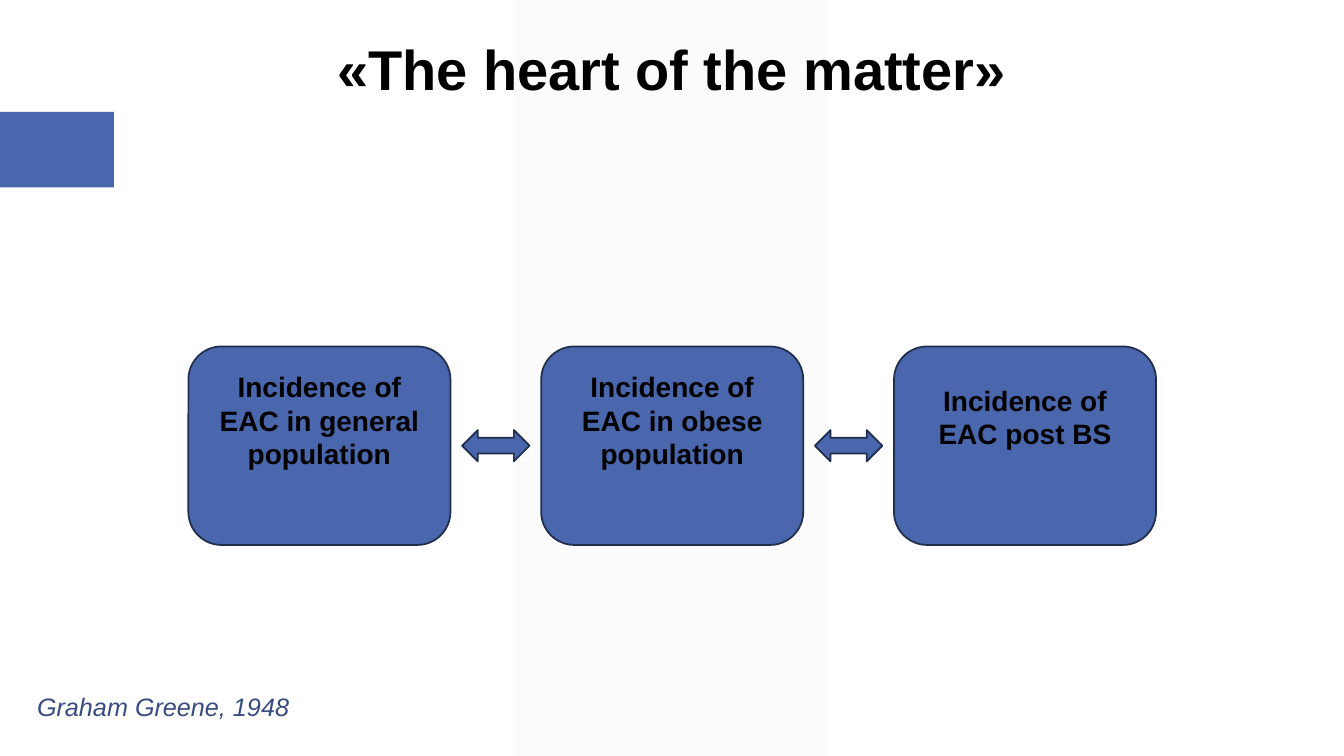
from lxml import etree
from pptx import Presentation
from pptx.dml.color import RGBColor
from pptx.enum import shapes, text
from pptx.oxml import ns
from pptx.util import Pt

TITLE = "«The heart of the matter»"
SOURCE = "Graham Greene, 1948"
# label, space kept free at the bottom of the box
GROUPS = [
    ("Incidence of EAC in general population", 40.5),
    ("Incidence of EAC in obese population", 40.5),
    ("Incidence of EAC post BS", 45),
]
BLUE, DARK_BLUE, NAVY, GREY, BLACK = "4A66AC", "384C81", "202D4B", "F2F2F2", "000000"

SLIDE_WIDTH, SLIDE_HEIGHT = 960, 540
BOX_LEFT, BOX_TOP, BOX_WIDTH, BOX_HEIGHT = 134.6, 247.5, 187.2, 141.8
BOX_PITCH = 252
ARROW_WIDTH, ARROW_HEIGHT = 48.2, 22.4


def colour(value):
    return RGBColor.from_string(value)


def place(shape, left, top, width, height):
    shape.left, shape.top = Pt(left), Pt(top)
    shape.width, shape.height = Pt(width), Pt(height)


def write(shape, wording, size, hue, align, anchor, bold=False, italic=False):
    frame = shape.text_frame
    frame.text = wording
    frame.word_wrap = True
    frame.auto_size = text.MSO_AUTO_SIZE.NONE
    frame.vertical_anchor = anchor
    paragraph = frame.paragraphs[0]
    paragraph.alignment = align
    font = paragraph.font
    font.name, font.size, font.bold, font.italic = "Arial", Pt(size), bold, italic
    font.color.rgb = colour(hue)


def add_filled(slide, kind, bounds, fill, line=None):
    shape = slide.shapes.add_shape(kind, *map(Pt, bounds))
    shape.shadow.inherit = False
    shape.fill.solid()
    shape.fill.fore_color.rgb = colour(fill)
    if line:
        shape.line.color.rgb = colour(line)
        shape.line.width = Pt(1.25)
    else:
        shape.line.fill.background()
    return shape


def add_backdrop(slide):
    """Pale centre band and left marker, behind the title."""
    kinds = shapes.MSO_SHAPE
    band = add_filled(slide, kinds.PARALLELOGRAM, (367.2, 0, 224.6, SLIDE_HEIGHT), GREY)
    band.adjustments[0] = 0
    fill_colour = band.element.spPr.find(ns.qn("a:solidFill"))[0]
    etree.SubElement(fill_colour, ns.qn("a:alpha"), val="30000")
    marker = add_filled(slide, kinds.RECTANGLE, (0, 79.9, 81.4, 54), BLUE)
    for shape in (band, marker):
        slide.shapes.title.element.addprevious(shape.element)


def add_groups(slide):
    middle = BOX_TOP + BOX_HEIGHT / 2
    gap = BOX_PITCH - BOX_WIDTH
    for index, (label, free_space) in enumerate(GROUPS):
        left = BOX_LEFT + index * BOX_PITCH
        box = add_filled(slide, shapes.MSO_SHAPE.ROUNDED_RECTANGLE,
                         (left, BOX_TOP, BOX_WIDTH, BOX_HEIGHT), BLUE, NAVY)
        write(box, label, 20, BLACK, text.PP_ALIGN.CENTER, text.MSO_ANCHOR.MIDDLE, bold=True)
        box.text_frame.margin_bottom = Pt(free_space)
        if index:
            arrow_left = left - (gap + ARROW_WIDTH) / 2
            add_filled(slide, shapes.MSO_SHAPE.LEFT_RIGHT_ARROW,
                       (arrow_left, middle - ARROW_HEIGHT / 2, ARROW_WIDTH, ARROW_HEIGHT),
                       BLUE, NAVY)


def main():
    presentation = Presentation()
    presentation.slide_width, presentation.slide_height = Pt(SLIDE_WIDTH), Pt(SLIDE_HEIGHT)
    slide = presentation.slides.add_slide(presentation.slide_layouts.get_by_name("Title Only"))

    title = slide.shapes.title
    place(title, 226.8, 20.9, 505.4, 55.4)
    write(title, TITLE, 40, BLACK, text.PP_ALIGN.CENTER, text.MSO_ANCHOR.TOP, bold=True)

    add_backdrop(slide)
    add_groups(slide)

    source = slide.shapes.add_textbox(Pt(19.4), Pt(490.3), Pt(472.3), Pt(28.8))
    write(source, SOURCE, 18, DARK_BLUE, text.PP_ALIGN.LEFT, text.MSO_ANCHOR.TOP, italic=True)

    presentation.save("out.pptx")


if __name__ == "__main__":
    main()
